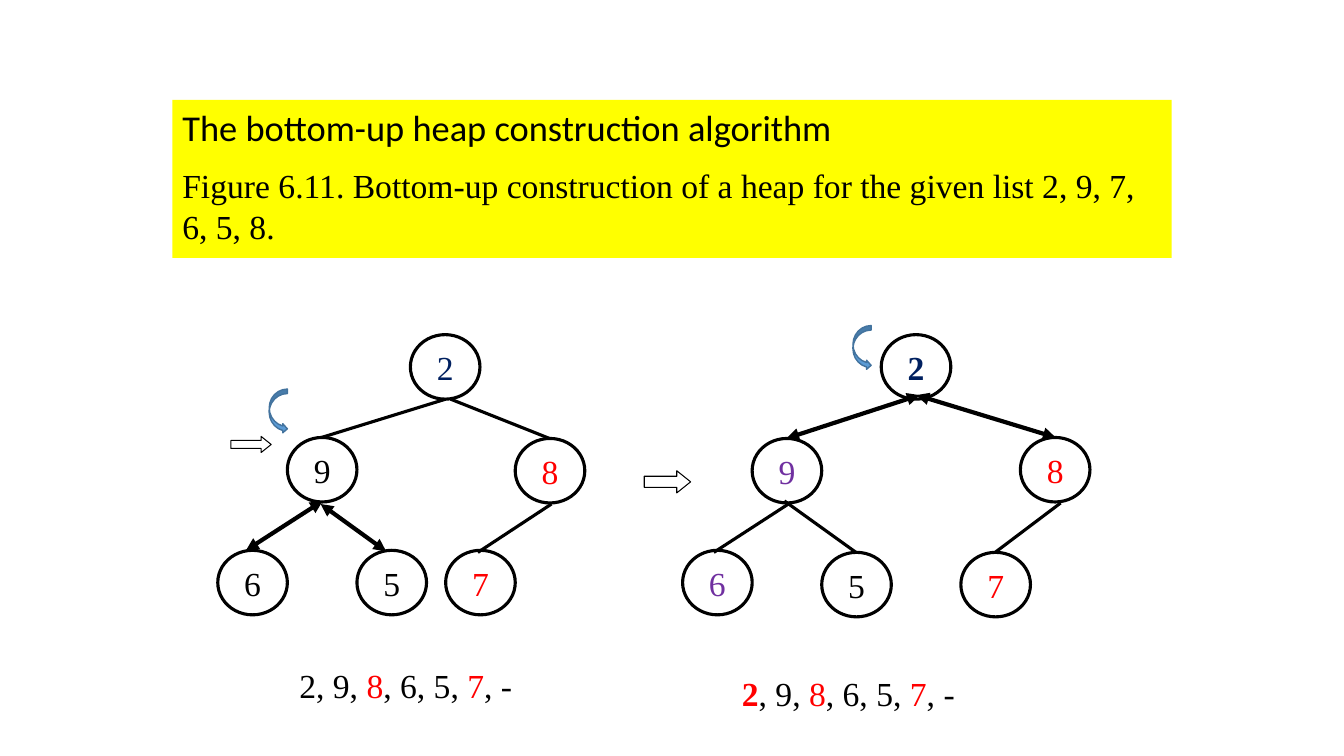
import pptx
import pptx.util
import pptx.dml.color
import pptx.enum.shapes
import pptx.enum.text
import pptx.oxml.ns
import lxml.etree

Inches = pptx.util.Inches
Pt = pptx.util.Pt
RGBColor = pptx.dml.color.RGBColor
MSO_SHAPE = pptx.enum.shapes.MSO_SHAPE
PP_ALIGN = pptx.enum.text.PP_ALIGN
MSO_ANCHOR = pptx.enum.text.MSO_ANCHOR
qn = pptx.oxml.ns.qn

BLACK = RGBColor(0x00, 0x00, 0x00)
WHITE = RGBColor(0xFF, 0xFF, 0xFF)
YELLOW = RGBColor(0xFF, 0xFF, 0x00)
RED = RGBColor(0xFF, 0x00, 0x00)
NAVY = RGBColor(0x00, 0x20, 0x60)
PURPLE = RGBColor(0x70, 0x30, 0xA0)
BLUE = RGBColor(0x5B, 0x9B, 0xD5)
BLUE_EDGE = RGBColor(0x43, 0x73, 0x9E)

SERIF = "Times New Roman"
NODE_W, NODE_H = 0.69, 0.64


class HeapSlide:
    def __init__(self, prs):
        self.s = prs.slides.add_slide(prs.slide_layouts[6])

    def shape(self, kind, box, fill, line=None, width=0):
        sp = self.s.shapes.add_shape(kind, *map(Inches, box))
        sp.shadow.inherit = False
        sp.fill.solid()
        sp.fill.fore_color.rgb = fill
        if line is None:
            sp.line.fill.background()
        else:
            sp.line.color.rgb = line
            sp.line.width = Pt(width)
        return sp

    def run(self, p, text, color=BLACK, bold=False, size=24, font=SERIF):
        r = p.add_run()
        r.text = text
        r.font.size = Pt(size)
        r.font.name = font
        r.font.bold = bold
        r.font.color.rgb = color

    def heading(self, box, title, caption):
        tf = self.shape(MSO_SHAPE.RECTANGLE, box, YELLOW).text_frame
        tf.word_wrap = True
        tf.vertical_anchor = MSO_ANCHOR.TOP
        p = tf.paragraphs[0]
        p.alignment = PP_ALIGN.LEFT
        p.space_after = Pt(12)
        self.run(p, title, size=26, font="Calibri")
        p = tf.add_paragraph()
        p.alignment = PP_ALIGN.LEFT
        p.space_after = Pt(6)
        self.run(p, caption)

    def node(self, left, top, key, color=BLACK, bold=False):
        box = (left, top, NODE_W, NODE_H)
        tf = self.shape(MSO_SHAPE.OVAL, box, WHITE, BLACK, 2.25).text_frame
        tf.vertical_anchor = MSO_ANCHOR.MIDDLE
        p = tf.paragraphs[0]
        p.alignment = PP_ALIGN.CENTER
        self.run(p, key, color, bold)

    def edge(self, x1, y1, x2, y2, compared=False):
        cx = self.s.shapes.add_connector(
            pptx.enum.shapes.MSO_CONNECTOR.STRAIGHT,
            *map(Inches, (x1, y1, x2, y2)))
        cx.line.color.rgb = BLACK
        cx.line.width = Pt(3 if compared else 2.25)
        spPr = cx._element.spPr
        if compared:
            ln = spPr.find(qn("a:ln"))
            for end in ("a:headEnd", "a:tailEnd"):
                lxml.etree.SubElement(ln, qn(end), type="triangle")
        lxml.etree.SubElement(spPr, qn("a:effectLst"))

    def step_arrow(self, *box):
        sp = self.shape(MSO_SHAPE.RIGHT_ARROW, box, WHITE, BLACK, 0.75)
        sp.adjustments[1] = 0.624

    def check_arrow(self, left, top):
        self.shape(MSO_SHAPE.CURVED_RIGHT_ARROW, (left, top, 0.18, 0.44),
                   BLUE, BLUE_EDGE, 1)

    def key_list(self, left, top, runs):
        tf = self.s.shapes.add_textbox(
            *map(Inches, (left, top, 2.61, 0.5))).text_frame
        tf.word_wrap = True
        for run in runs:
            self.run(tf.paragraphs[0], *run)


def main():
    prs = pptx.Presentation()
    prs.slide_width, prs.slide_height = Inches(13.33), Inches(7.5)
    slide = HeapSlide(prs)

    # Heading
    slide.heading((1.71, 0.99, 9.91, 1.57),
                  "The bottom-up heap construction algorithm",
                  "Figure 6.11. Bottom-up construction of a heap for the "
                  "given list 2, 9, 7, 6, 5, 8.")

    # Nodes of the left and right trees
    for node in (
        (4.07, 3.32, "2", NAVY),
        (2.85, 4.34, "9"),
        (5.11, 4.35, "8", RED),
        (2.16, 5.46, "6"),
        (3.54, 5.46, "5"),
        (4.42, 5.46, "7", RED),
        (8.74, 3.32, "2", NAVY, True),
        (7.46, 4.35, "9", PURPLE),
        (10.12, 4.34, "8", RED),
        (6.77, 5.46, "6", PURPLE),
        (8.15, 5.48, "5"),
        (9.53, 5.48, "7", RED),
    ):
        slide.node(*node)

    # Edges; compared pairs carry arrowheads
    for edge in (
        (4.42, 3.96, 3.19, 4.34),
        (4.47, 3.96, 5.45, 4.35),
        (5.47, 5, 4.74, 5.48),
        (3.2, 4.97, 2.44, 5.46, True),
        (3.83, 5.47, 3.18, 5, True),
        (9.12, 3.92, 7.8, 4.35, True),
        (10.47, 4.34, 9.09, 3.92, True),
        (7.82, 5, 7.08, 5.48),
        (7.78, 4.97, 8.49, 5.48),
        (10.52, 4.99, 9.87, 5.48),
    ):
        slide.edge(*edge)

    # Step arrows and check arrows
    slide.step_arrow(2.29, 4.33, 0.4, 0.16)
    slide.step_arrow(6.39, 4.67, 0.46, 0.22)
    slide.check_arrow(2.67, 3.86)
    slide.check_arrow(8.46, 3.23)

    # Array contents under each tree
    tail = [("8", RED), (", 6, 5, ",), ("7", RED), (", -",)]
    slide.key_list(2.87, 6.55, [("2, 9, ",)] + tail)
    slide.key_list(7.26, 6.63, [("2", RED, True), (", 9, ",)] + tail)

    prs.save("out.pptx")


if __name__ == "__main__":
    main()
